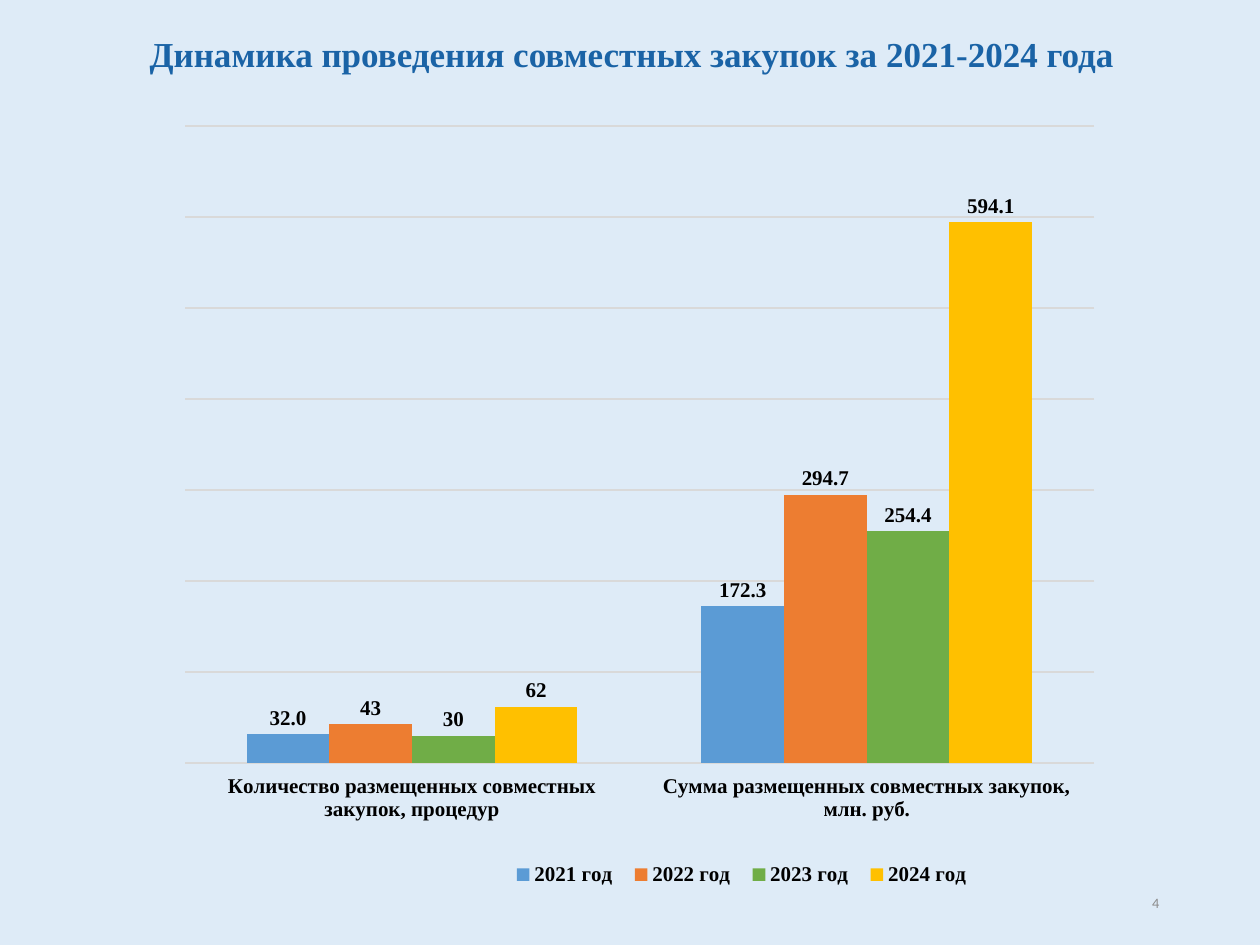
"""Build a slide charting joint purchases for 2021-2024."""
from lxml.etree import SubElement
from pptx import Presentation
from pptx.chart.data import CategoryChartData
from pptx.dml.color import RGBColor as RGB
from pptx.enum.chart import XL_CHART_TYPE as CT, XL_LABEL_POSITION as LP
from pptx.enum.chart import XL_LEGEND_POSITION as LEG, XL_TICK_LABEL_POSITION as TL
from pptx.enum.chart import XL_TICK_MARK as TM
from pptx.enum.text import MSO_ANCHOR as ANC, MSO_AUTO_SIZE as FIT, PP_ALIGN as AL
from pptx.oxml.ns import qn
from pptx.util import Inches, Pt

C = {"bg": "DEEBF7", "title": "1A63A6", "number": "8C8C8C", "text": "000000",
     "grid": "D9D9D9"}
SERIES = [
    ("2021 год", (32, 172.3), "5B9BD5", "0.0"),
    ("2022 год", (43, 294.7), "ED7D31", "General"),
    ("2023 год", (30, 254.4), "70AD47", "General"),
    ("2024 год", (62, 594.1), "FFC000", "General"),
]
FONT = "Times New Roman"


def write(s, text, size, color, font=FONT, bold=False, align=AL.CENTER, anchor=ANC.TOP):
    tf = s.text_frame
    tf.word_wrap = True
    tf.vertical_anchor = anchor
    p = tf.paragraphs[0]
    p.alignment = align
    r = p.add_run()
    r.text = text
    r.font.name, r.font.size, r.font.bold = font, Pt(size), bold
    r.font.color.rgb = RGB.from_string(color)


def place(parent, index, x, y, w, h, inner=False):
    for old in parent.findall(qn("c:layout")):
        parent.remove(old)
    layout = SubElement(parent, qn("c:layout"))
    parent.insert(index, layout)
    manual = SubElement(layout, qn("c:manualLayout"))
    target = [("layoutTarget", "inner")] if inner else []
    for tag, val in target + [("xMode", "edge"), ("yMode", "edge"),
                              ("x", x), ("y", y), ("w", w), ("h", h)]:
        SubElement(manual, qn("c:" + tag)).set("val", str(val))


prs = Presentation()
prs.slide_width, prs.slide_height = Inches(10), Inches(7.5)
W, H = prs.slide_width, prs.slide_height
slide = prs.slides.add_slide(prs.slide_layouts[5])
fill = slide.background.fill
fill.solid()
fill.fore_color.rgb = RGB.from_string(C["bg"])

s = slide.shapes.add_textbox(int(W * 0.71), int(H * 0.93), int(W * 0.22), int(H * 0.05))
write(s, "4", 8.2, C["number"], font="Calibri", align=AL.RIGHT, anchor=ANC.MIDDLE)

s = slide.shapes.title
s.left, s.top, s.width, s.height = int(W * 0.083), int(H * 0.028), int(W * 0.837), int(H * 0.058)
s.fill.solid()
s.fill.fore_color.rgb = RGB.from_string(C["bg"])
write(s, "Динамика проведения совместных закупок за 2021-2024 года", 20, C["title"], bold=True)
s.text_frame.auto_size = FIT.SHAPE_TO_FIT_TEXT

data = CategoryChartData()
data.categories = ["Количество размещенных совместных закупок, процедур",
                   "Сумма размещенных совместных закупок, млн. руб."]
for name, vals, color, fmt in SERIES:
    data.add_series(name, vals, number_format=fmt)
chart = slide.shapes.add_chart(CT.COLUMN_CLUSTERED, int(W * 0.098), int(H * 0.108),
                               int(W * 0.811), int(H * 0.843), data).chart
chart.has_title = False
chart.has_legend = True
legend = chart.legend
legend.position = LEG.BOTTOM
legend.include_in_layout = False

plot = chart.plots[0]
plot.gap_width, plot.overlap, plot.vary_by_categories = 150, 0, False
fonts = [chart.font, legend.font, chart.category_axis.tick_labels.font]
for ser, (name, vals, color, fmt) in zip(plot.series, SERIES):
    ser.format.fill.solid()
    ser.format.fill.fore_color.rgb = RGB.from_string(color)
    labels = ser.data_labels
    labels.show_value = True
    labels.position = LP.OUTSIDE_END
    labels.number_format, labels.number_format_is_linked = fmt, False
    fonts.append(labels.font)
for font in fonts:
    font.name, font.size, font.bold = FONT, Pt(12), True
    font.color.rgb = RGB.from_string(C["text"])

cat, val = chart.category_axis, chart.value_axis
cat.major_tick_mark = cat.minor_tick_mark = TM.NONE
cat.tick_label_position = TL.LOW
cat.format.line.fill.background()
val.visible = False
val.minimum_scale, val.maximum_scale, val.major_unit = 0, 700, 100
val.has_major_gridlines = True
line = val.major_gridlines.format.line
line.color.rgb, line.width = RGB.from_string(C["grid"]), Pt(0.75)

area = chart.element.find(".//" + qn("c:plotArea"))
place(area, 0, 0.06, 0.03, 0.89, 0.8, inner=True)
place(area.getparent().find(qn("c:legend")), 1, 0.37, 0.94, 0.47, 0.06)

prs.save("out.pptx")
